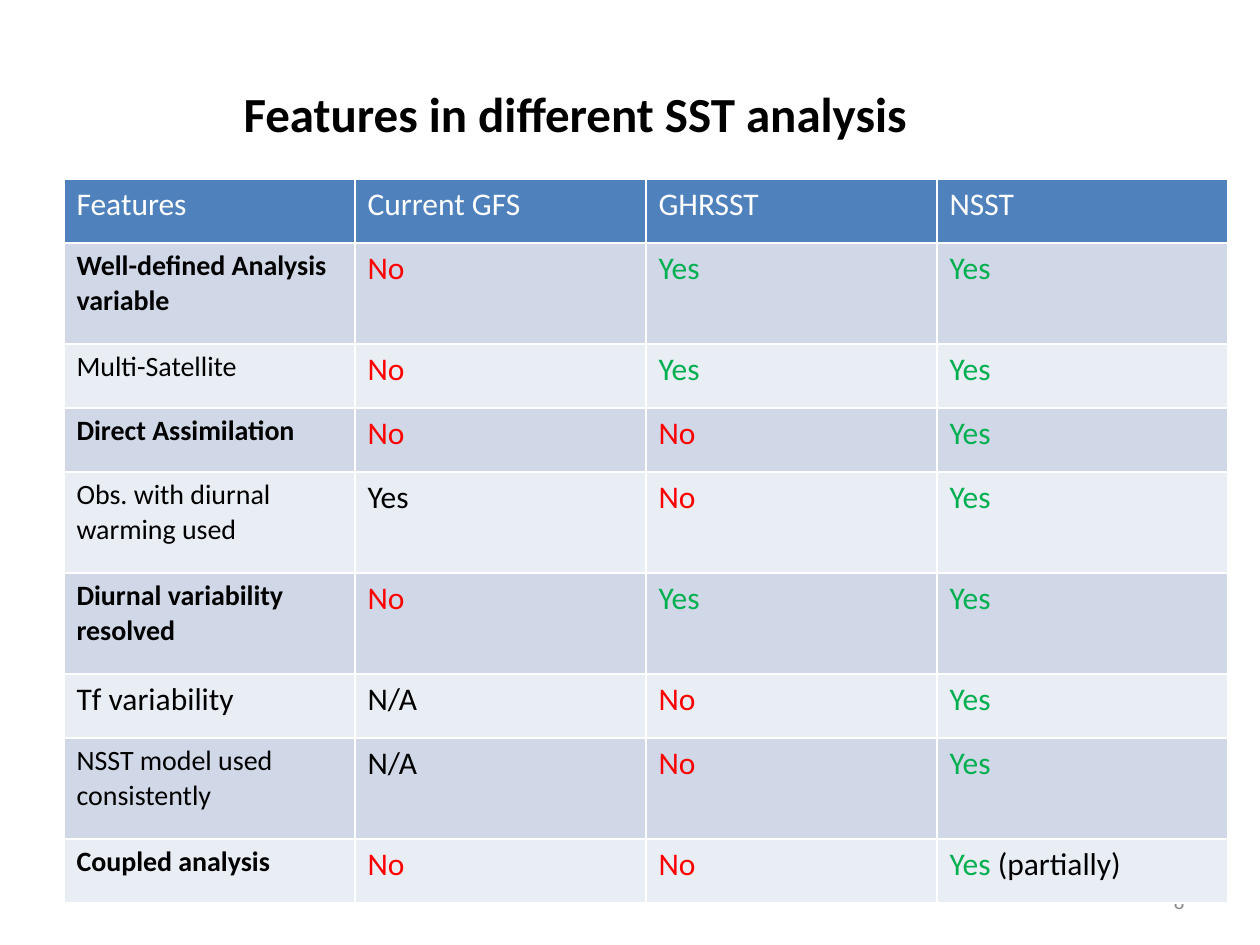
"""Build a slide with a table that compares features of SST analyses."""
from dataclasses import dataclass

from pptx import Presentation
from pptx.dml.color import RGBColor
from pptx.enum.text import MSO_ANCHOR, PP_ALIGN
from pptx.util import Pt

LEFT, RIGHT = PP_ALIGN.LEFT, PP_ALIGN.RIGHT
TOP, MIDDLE = MSO_ANCHOR.TOP, MSO_ANCHOR.MIDDLE
TITLE_ONLY = 5
PX = 914400 / 126


@dataclass(frozen=True)
class Theme:
    font: str = "Calibri"
    ink: str = "000000"
    pale: str = "FFFFFF"
    grey: str = "8C8C8C"
    good: str = "00B050"
    bad: str = "FF0000"
    head: str = "4F81BD"
    bands: tuple = ("D0D8E8", "E9EDF4")
    title: int = 28
    body: int = 18
    label: int = 16
    note: int = 12


THEME = Theme()
TITLE = "Features in different SST analysis"
PAGE = "8"
HEADS = ["Features", "Current GFS", "GHRSST", "NSST"]
YES = [("Yes", THEME.good)]
NO = [("No", THEME.bad)]
PLAIN = [("Yes", THEME.ink)]
NA = [("N/A", THEME.ink)]
PART = [("Yes ", THEME.good), ("(partially)", THEME.ink)]
ROWS = [
    ("Well-defined Analysis variable", THEME.label, True, 101, [NO, YES, YES]),
    ("Multi-Satellite", THEME.label, False, 64, [NO, YES, YES]),
    ("Direct Assimilation", THEME.label, True, 64, [NO, NO, YES]),
    ("Obs. with diurnal warming used", THEME.label, False, 101, [PLAIN, NO, YES]),
    ("Diurnal variability resolved", THEME.label, True, 101, [NO, YES, YES]),
    ("Tf variability", THEME.body, False, 64, [NA, NO, YES]),
    ("NSST model used consistently", THEME.label, False, 101, [NA, NO, YES]),
    ("Coupled analysis", THEME.label, True, 64, [NO, NO, PART]),
]
HEAD_H, COL_W = 64, 291
BOXES = {
    "page": (903, 876, 294, 50),
    "table": (64, 179, COL_W * len(HEADS), HEAD_H + sum(r[3] for r in ROWS)),
    "title": (231, 77, 788, 72),
}


def emu(px):
    return round(px * PX)


def write(frame, runs, size, bold=False, align=LEFT):
    para = frame.paragraphs[0]
    para.alignment = align
    for text, tint in runs:
        run = para.add_run()
        run.text = text
        look = {"name": THEME.font, "size": Pt(size), "bold": bold}
        for key, val in look.items():
            setattr(run.font, key, val)
        run.font.color.rgb = RGBColor.from_string(tint)


def fill_cell(cell, runs, size, bold, tint):
    cell.fill.solid()
    cell.fill.fore_color.rgb = RGBColor.from_string(tint)
    write(cell.text_frame, runs, size, bold)


def add_page(slide):
    box = slide.shapes.add_textbox(*map(emu, BOXES["page"]))
    frame = box.text_frame
    frame.word_wrap = True
    frame.vertical_anchor = MIDDLE
    write(frame, [(PAGE, THEME.grey)], THEME.note, align=RIGHT)


def add_grid(slide):
    place = map(emu, BOXES["table"])
    grid = slide.shapes.add_table(len(ROWS) + 1, len(HEADS), *place).table
    for col in grid.columns:
        col.width = emu(COL_W)
    for row, high in zip(grid.rows, [HEAD_H] + [r[3] for r in ROWS]):
        row.height = emu(high)
    for c, text in enumerate(HEADS):
        fill_cell(grid.cell(0, c), [(text, THEME.pale)], THEME.body, False, THEME.head)
    for r, (text, size, bold, _, marks) in enumerate(ROWS, 1):
        tint = THEME.bands[(r - 1) % 2]
        fill_cell(grid.cell(r, 0), [(text, THEME.ink)], size, bold, tint)
        for c, runs in enumerate(marks, 1):
            fill_cell(grid.cell(r, c), runs, THEME.body, False, tint)


def add_title(slide):
    shape = slide.shapes.title
    for key, val in zip(("left", "top", "width", "height"), BOXES["title"]):
        setattr(shape, key, emu(val))
    frame = shape.text_frame
    frame.word_wrap = True
    frame.vertical_anchor = TOP
    write(frame, [(TITLE, THEME.ink)], THEME.title, True)


def main():
    deck = Presentation()
    deck.slide_width, deck.slide_height = emu(1260), emu(945)
    slide = deck.slides.add_slide(deck.slide_layouts[TITLE_ONLY])
    add_page(slide)
    add_grid(slide)
    add_title(slide)
    deck.save("out.pptx")


if __name__ == "__main__":
    main()
